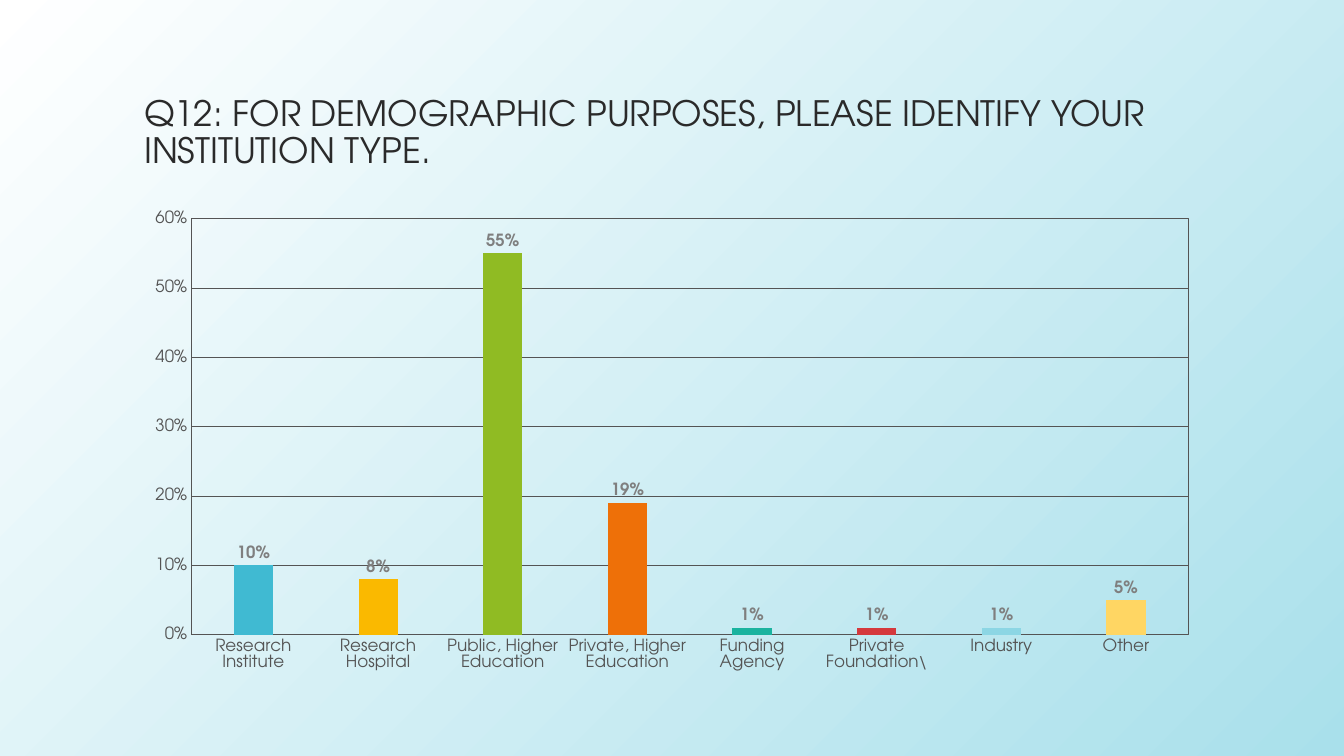
from lxml import etree
from pptx import Presentation
from pptx.chart.data import CategoryChartData
from pptx.dml.color import RGBColor
from pptx.enum.chart import XL_CHART_TYPE, XL_LABEL_POSITION, XL_TICK_MARK
from pptx.enum.text import MSO_ANCHOR, MSO_AUTO_SIZE, PP_ALIGN
from pptx.oxml import parse_xml
from pptx.util import Inches, Pt

COLUMN_CLUSTERED = XL_CHART_TYPE.COLUMN_CLUSTERED
OUTSIDE_END = XL_LABEL_POSITION.OUTSIDE_END
NO_TICK = XL_TICK_MARK.NONE
BOTTOM = MSO_ANCHOR.BOTTOM
LEFT = PP_ALIGN.LEFT
NO_AUTOFIT = MSO_AUTO_SIZE.NONE
FONT = "TeX Gyre Adventor"
GREY = "545454"
CHART_NS = "http://schemas.openxmlformats.org/drawingml/2006/chart"
DRAWING_NS = "http://schemas.openxmlformats.org/drawingml/2006/main"


def color(hex_value):
    return RGBColor.from_string(hex_value)


def style_font(font, size, hex_value, bold=False):
    font.name = FONT
    font.size = Pt(size)
    font.bold = bold
    font.color.rgb = color(hex_value)


presentation = Presentation()
presentation.slide_width = Inches(13.33)
presentation.slide_height = Inches(7.5)
slide = presentation.slides.add_slide(presentation.slide_layouts[5])

background = slide.background.fill
background.gradient()
background.gradient_angle = 315
for stop, position, hex_value in zip(background.gradient_stops, (0, 1), ("FFFFFF", "A9E0EB")):
    stop.position = position
    stop.color.rgb = color(hex_value)

margin = Inches(1.33)
content_width = presentation.slide_width - 2 * margin

title = slide.shapes.title
title.left, title.top = margin, Inches(0.3)
title.width, title.height = content_width, Inches(1.45)
title_frame = title.text_frame
title_frame.text = "Q12: FOR DEMOGRAPHIC PURPOSES, PLEASE IDENTIFY YOUR INSTITUTION TYPE."
title_frame.word_wrap = True
title_frame.auto_size = NO_AUTOFIT
title_frame.vertical_anchor = BOTTOM
paragraph = title_frame.paragraphs[0]
paragraph.alignment = LEFT
paragraph.line_spacing = 0.9
style_font(paragraph.runs[0].font, 25, "2A2A2A")

institutions = [
    ("Research Institute", 0.10, "40BAD2"),
    ("Research Hospital", 0.08, "FAB900"),
    ("Public, Higher Education", 0.55, "90BB23"),
    ("Private, Higher Education", 0.19, "EE7008"),
    ("Funding Agency", 0.01, "1AB39F"),
    ("Private Foundation\\", 0.01, "D5393D"),
    ("Industry", 0.01, "8CD6E4"),
    ("Other", 0.05, "FFD663"),
]
chart_data = CategoryChartData(number_format="0%")
chart_data.categories = [name for name, share, fill in institutions]
chart_data.add_series("Series 1", [share for name, share, fill in institutions])
chart = slide.shapes.add_chart(
    COLUMN_CLUSTERED, margin, Inches(2), content_width, Inches(4.75), chart_data
).chart
chart.has_title = False
chart.has_legend = False
style_font(chart.font, 10, GREY)

for axis in (chart.category_axis, chart.value_axis):
    axis.major_tick_mark = NO_TICK
    axis.minor_tick_mark = NO_TICK
    style_font(axis.tick_labels.font, 12, GREY)

category_line = chart.category_axis.format.line
category_line.color.rgb = color(GREY)
category_line.width = Pt(1)

value_axis = chart.value_axis
value_axis.minimum_scale = 0
value_axis.maximum_scale = 0.6
value_axis.major_unit = 0.1
value_axis.tick_labels.number_format = "0%"
value_axis.tick_labels.number_format_is_linked = False
value_axis.format.line.fill.background()
value_axis.has_major_gridlines = True
gridline = value_axis.major_gridlines.format.line
gridline.color.rgb = color(GREY)
gridline.width = Pt(0.75)

plot = chart.plots[0]
plot.gap_width = 219
plot.overlap = -27
plot.vary_by_categories = False
plot.has_data_labels = True
labels = plot.data_labels
labels.show_value = True
labels.position = OUTSIDE_END
labels.number_format = "0%"
labels.number_format_is_linked = False
style_font(labels.font, 12, "7F7F7F", bold=True)

series = plot.series[0]
series.invert_if_negative = False
for index, (name, share, fill) in enumerate(institutions):
    point_fill = series.points[index].format.fill
    point_fill.solid()
    point_fill.fore_color.rgb = color(fill)

plot_area = chart.element.find(f".//{{{CHART_NS}}}plotArea")
for layout in plot_area.findall(f"{{{CHART_NS}}}layout"):
    plot_area.remove(layout)
layout = etree.Element(f"{{{CHART_NS}}}layout")
manual_layout = etree.SubElement(layout, f"{{{CHART_NS}}}manualLayout")
for tag, value in (
    ("layoutTarget", "inner"), ("xMode", "edge"), ("yMode", "edge"),
    ("x", "0.053"), ("y", "0.036"), ("w", "0.927"), ("h", "0.869"),
):
    etree.SubElement(manual_layout, f"{{{CHART_NS}}}{tag}", val=value)
plot_area.insert(0, layout)
plot_area.append(parse_xml(
    f'<c:spPr xmlns:c="{CHART_NS}" xmlns:a="{DRAWING_NS}"><a:noFill/>'
    f'<a:ln w="9525"><a:solidFill><a:srgbClr val="{GREY}"/></a:solidFill></a:ln></c:spPr>'
))

presentation.save("out.pptx")
